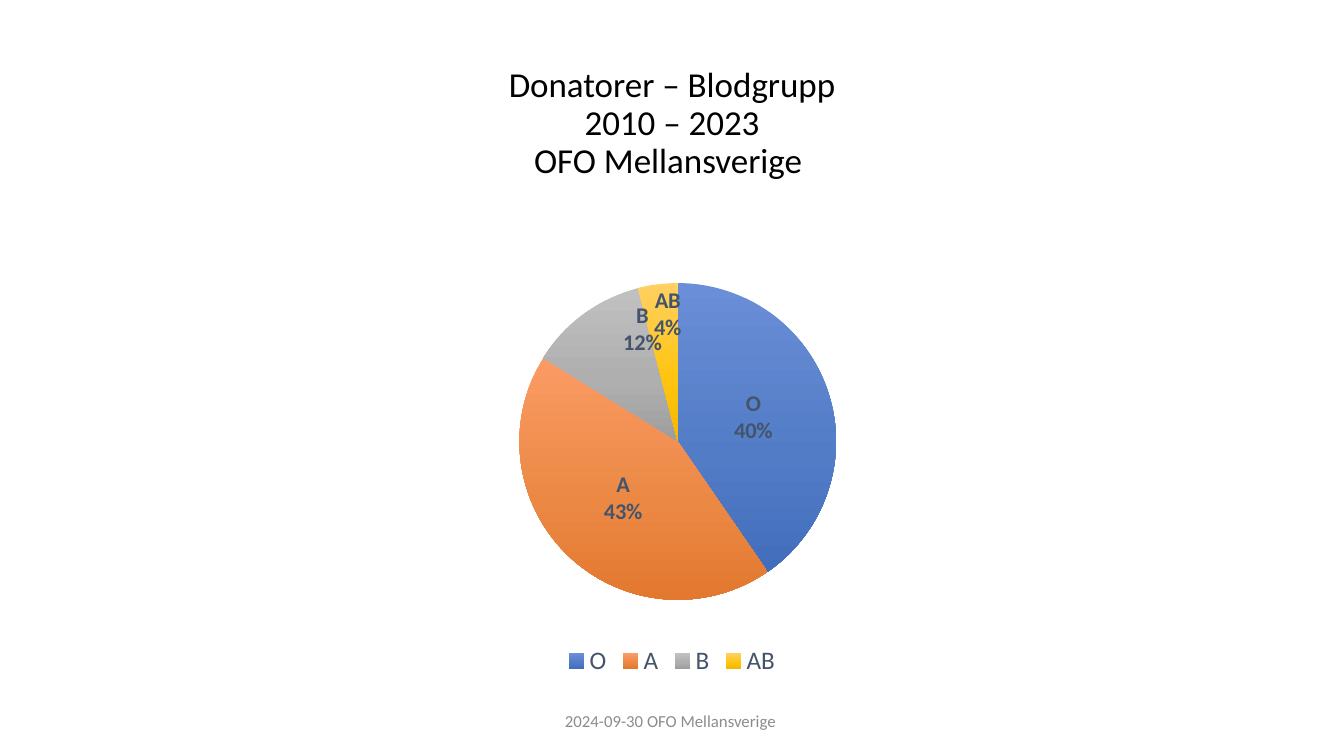
import copy

import lxml.etree
import pptx
import pptx.chart.data
import pptx.dml.color
import pptx.enum.chart
import pptx.enum.text
import pptx.oxml
import pptx.oxml.ns
import pptx.util

Cm, Pt = pptx.util.Cm, pptx.util.Pt
qn = pptx.oxml.ns.qn

FONT = "Calibri"
COLORS = {"title": "000000", "footer": "8C8C8C", "label": "44546A"}

TITLE = "Donatorer – Blodgrupp\v2010 – 2023\vOFO Mellansverige "
FOOTER = "2024-09-30 OFO Mellansverige "

# blood group, share, gradient from top to bottom, label shift (parts of the chart)
GROUPS = [
    ("O", 40, ("6A8ED7", "527CC6", "416DBC"), None),
    ("A", 43, ("FB9B64", "EB8844", "E3782F"), None),
    ("B", 12, ("C0C0C0", "AFAFAF", "9E9E9E"), (0.01, -0.1)),
    ("AB", 4, ("FFD063", "FFC410", "F5B800"), (0, -0.1)),
]
GRADIENT_POSITIONS = (0, 0.6, 1)
PLOT_AREA = {"x": 0.08, "y": 0.17, "w": 0.85, "h": 0.66}

SLIDE_WIDTH, SLIDE_HEIGHT = Cm(33.87), Cm(19.05)
CONTENT_LEFT, CONTENT_WIDTH = Cm(2.33), Cm(29.21)


def rgb(name):
    return pptx.dml.color.RGBColor.from_string(COLORS.get(name, name))


def style_font(font, size, color, bold=False):
    font.name, font.size, font.bold = FONT, Pt(size), bold
    font.color.rgb = rgb(color)


def add_text(slide, text, left, top, width, height, size, color):
    box = slide.shapes.add_textbox(left, top, width, height)
    frame = box.text_frame
    frame.word_wrap = True
    frame.vertical_anchor = pptx.enum.text.MSO_ANCHOR.MIDDLE
    para = frame.paragraphs[0]
    para.text = text
    para.alignment = pptx.enum.text.PP_ALIGN.CENTER
    style_font(para.font, size, color)
    return para


def manual_layout(values):
    """Build a c:layout element from tag and value pairs."""
    layout = lxml.etree.Element(qn("c:layout"))
    manual = lxml.etree.SubElement(layout, qn("c:manualLayout"))
    for tag, value in values.items():
        lxml.etree.SubElement(manual, qn("c:" + tag)).set("val", str(value))
    return layout


def show_group_and_percent(labels):
    """Set the content of a c:dLbls or c:dLbl element: group above percentage."""
    for tag, shown in (("showVal", "0"), ("showCatName", "1"), ("showPercent", "1")):
        labels.find(qn("c:" + tag)).set("val", shown)
    separator = lxml.etree.Element(qn("c:separator"))
    separator.text = "\n"
    anchor = labels.find(qn("c:showBubbleSize"))
    if anchor is None:
        anchor = labels.find(qn("c:showPercent"))
    anchor.addnext(separator)


def fill_slice(point, colors):
    fill = point.format.fill
    fill.gradient()
    fill.gradient_angle = 270
    last_stop = fill.gradient_stops[-1]._gs
    last_stop.addnext(copy.deepcopy(last_stop))
    # The stop list is read anew so that it holds the added stop.
    for stop, position, color in zip(point.format.fill.gradient_stops, GRADIENT_POSITIONS, colors):
        stop.position = position
        stop.color.rgb = rgb(color)
    point.format.line.fill.background()


def add_pie(slide):
    data = pptx.chart.data.CategoryChartData()
    data.categories = [group[0] for group in GROUPS]
    data.add_series("Series 1", [group[1] for group in GROUPS])
    chart = slide.shapes.add_chart(
        pptx.enum.chart.XL_CHART_TYPE.PIE,
        CONTENT_LEFT, Cm(5.08), CONTENT_WIDTH, Cm(12.09), data,
    ).chart
    chart.has_title = False
    style_font(chart.font, 10, "title")
    chart.has_legend = True
    chart.legend.position = pptx.enum.chart.XL_LEGEND_POSITION.BOTTOM
    chart.legend.include_in_layout = False
    style_font(chart.legend.font, 18, "label")

    plot_area = chart._chartSpace.chart.plotArea
    for old_layout in plot_area.findall(qn("c:layout")):
        plot_area.remove(old_layout)
    modes = {"layoutTarget": "inner", "xMode": "edge", "yMode": "edge"}
    plot_area.insert(0, manual_layout({**modes, **PLOT_AREA}))

    chart.plots[0].vary_by_categories = True
    series = chart.plots[0].series[0]
    center = pptx.enum.chart.XL_LABEL_POSITION.CENTER
    labels = series.data_labels
    labels.position = center
    style_font(labels.font, 16, "label", bold=True)
    show_group_and_percent(labels._element)

    for index, (_, _, colors, shift) in enumerate(GROUPS):
        point = series.points[index]
        fill_slice(point, colors)
        if shift:
            label = point.data_label
            style_font(label.font, 16, "label", bold=True)
            label.position = center
            element = labels._element.xpath(f"c:dLbl[c:idx/@val='{index}']")[0]
            element.find(qn("c:idx")).addnext(manual_layout(dict(zip("xy", shift))))
            show_group_and_percent(element)


def main():
    deck = pptx.Presentation()
    deck.slide_width, deck.slide_height = SLIDE_WIDTH, SLIDE_HEIGHT
    slide = deck.slides.add_slide(deck.slide_layouts[6])
    title = add_text(slide, TITLE, CONTENT_LEFT, Cm(1.55), CONTENT_WIDTH, Cm(3.15), 25, "title")
    title.line_spacing = 0.9
    footer = add_text(slide, FOOTER, Cm(11.23), Cm(17.65), Cm(11.43), Cm(1.02), 12, "footer")
    footer.space_after = Pt(6)
    add_pie(slide)
    deck.save("out.pptx")


if __name__ == "__main__":
    main()
